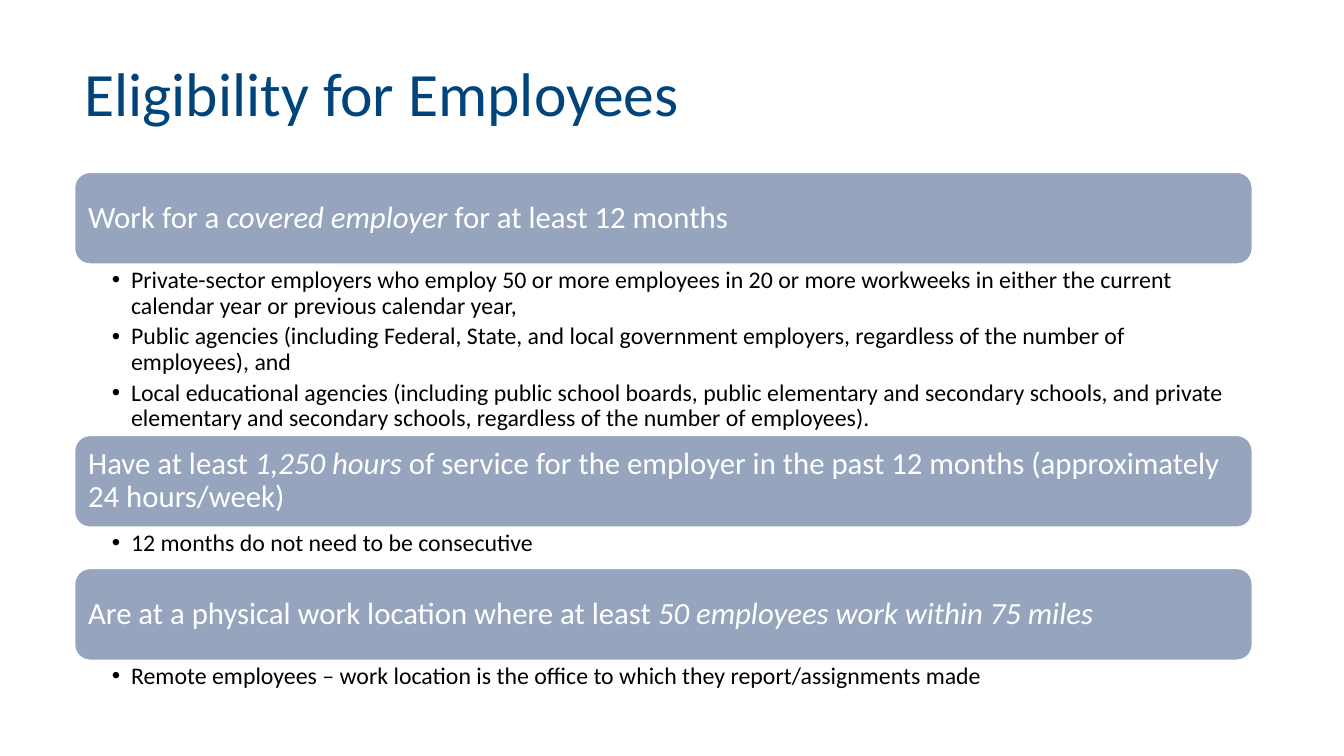
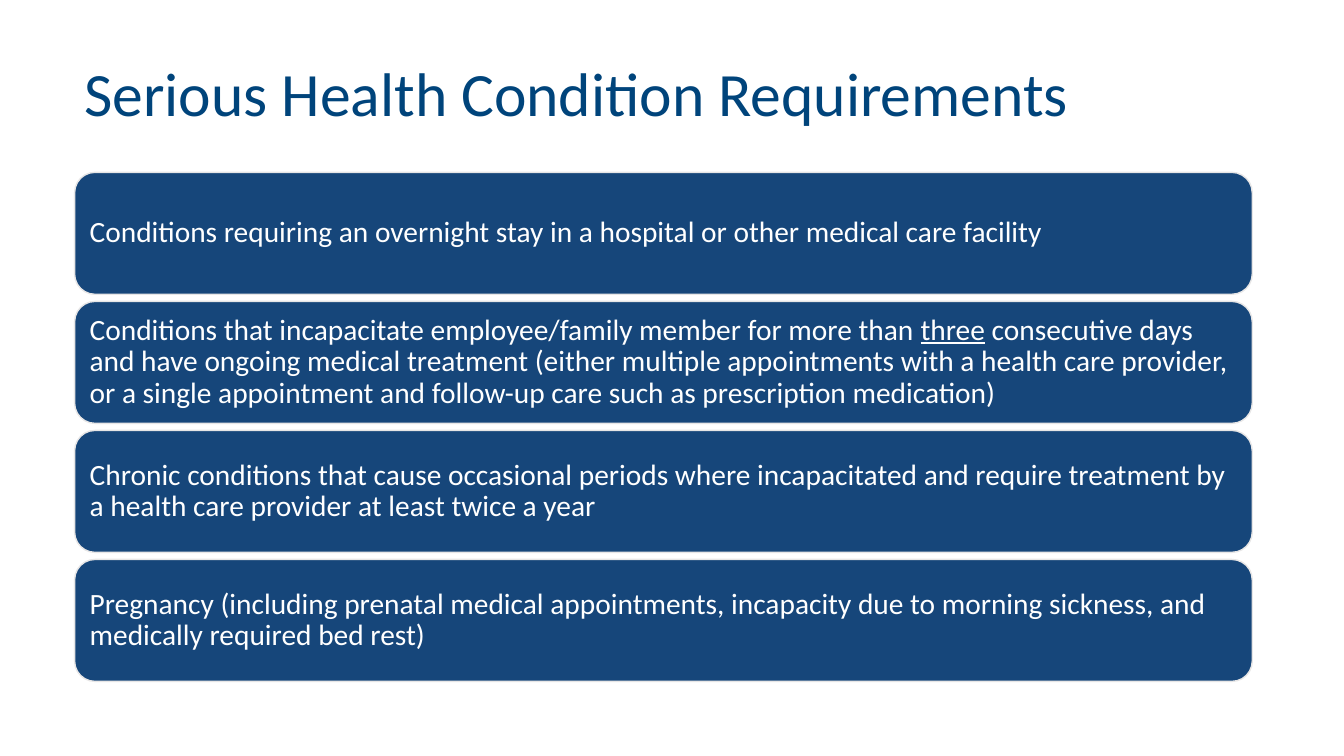
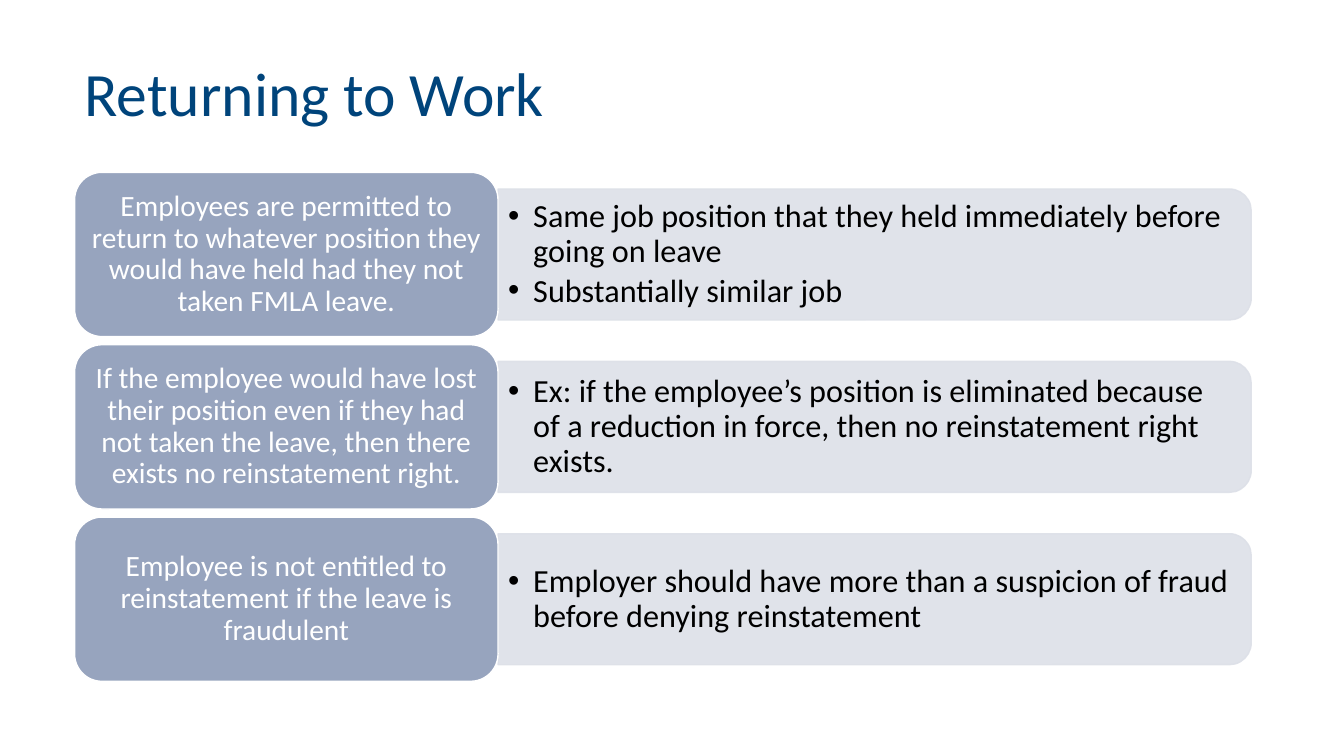
import dataclasses
import typing

import lxml.etree
import pptx
import pptx.dml.color
import pptx.enum.shapes
import pptx.enum.text
import pptx.oxml.ns
import pptx.util

Inches = pptx.util.Inches
Pt = pptx.util.Pt
qn = pptx.oxml.ns.qn
RGB = pptx.dml.color.RGBColor.from_string
SHAPE = pptx.enum.shapes.MSO_SHAPE
ALIGN = pptx.enum.text.PP_ALIGN
ANCHOR = pptx.enum.text.MSO_ANCHOR


# Theme: colours, type sizes and the shared grid
@dataclasses.dataclass(frozen=True)
class Theme:
    font: str = "Calibri"
    title: str = "00447B"
    light: str = "FFFFFF"
    dark: str = "000000"
    band: str = "97A4BE"
    navy: str = "16467A"
    navy_line: str = "E7E6E6"
    panel: str = "DDE0E8"
    panel_opacity: int = 90
    title_size: int = 44
    heading_size: int = 22
    card_size: int = 21
    body_size: int = 17
    panel_size: int = 23
    line_spacing: float = 0.9
    left: float = 0.74
    width: float = 11.68
    top: float = 1.71
    height: float = 5.05


T = Theme()


class Box(typing.NamedTuple):
    left: float
    top: float
    width: float
    height: float

    def emu(self) -> list[int]:
        return [Inches(v) for v in self]


class Run(typing.NamedTuple):
    text: str
    format: dict[str, bool] = {}


class Bullet(typing.NamedTuple):
    indent: float
    gap: float


Para = list[Run]


@dataclasses.dataclass(frozen=True)
class TextStyle:
    size: int
    color: str
    insets: tuple[float, float, float, float] = (0.1, 0.05, 0.1, 0.05)
    anchor: ANCHOR = ANCHOR.MIDDLE
    align: ALIGN = ALIGN.LEFT
    bullet: Bullet | None = None


class Section(typing.NamedTuple):
    heading: Para
    points: list[Para]
    body_height: float


class Row(typing.NamedTuple):
    card: Para
    points: list[Para]


TITLE = TextStyle(T.title_size, T.title)
HEADING = TextStyle(T.heading_size, T.light, (0.09,) * 4)
CONDITION = TextStyle(T.card_size, T.light, (0.09,) * 4)
CARD = TextStyle(T.card_size, T.light, (0.09, 0.04, 0.09, 0.04), align=ALIGN.CENTER)
BODY = TextStyle(T.body_size, T.dark, (0.37, 0.03, 0.17, 0.03), ANCHOR.TOP,
                 bullet=Bullet(0.19, 3.4))
PANEL = TextStyle(T.panel_size, T.dark, bullet=Bullet(0.25, 3.4))


# Drawing helpers
def apply(obj: typing.Any, values: dict[str, typing.Any]) -> None:
    for name, value in values.items():
        setattr(obj, name, value)


def add_bullet(p: typing.Any, indent: float) -> None:
    pPr = p._p.get_or_add_pPr()
    pPr.set("marL", str(Inches(indent)))
    pPr.set("indent", str(-Inches(indent)))
    lxml.etree.SubElement(pPr, qn("a:buFont")).set("typeface", "Arial")
    lxml.etree.SubElement(pPr, qn("a:buChar")).set("char", "•")


def write(sp: typing.Any, paras: list[Para], style: TextStyle) -> None:
    tf = sp.text_frame
    sides = ("margin_left", "margin_top", "margin_right", "margin_bottom")
    apply(tf, {"word_wrap": True, "vertical_anchor": style.anchor,
               **{side: Inches(v) for side, v in zip(sides, style.insets)}})
    for i, para in enumerate(paras):
        p = tf.add_paragraph() if i else tf.paragraphs[0]
        if style.bullet:
            add_bullet(p, style.bullet.indent)
            if i:
                p.space_before = Pt(style.bullet.gap)
        apply(p, {"alignment": style.align, "line_spacing": T.line_spacing})
        for run in para:
            r = p.add_run()
            r.text = run.text
            apply(r.font, {"name": T.font, "size": Pt(style.size), **run.format})
            r.font.color.rgb = RGB(style.color)


def add_text(s: typing.Any, box: Box, paras: list[Para], style: TextStyle) -> None:
    write(s.shapes.add_textbox(*box.emu()), paras, style)


def add_block(s: typing.Any, kind: SHAPE, box: Box, fill: str, line: str) -> typing.Any:
    sp = s.shapes.add_shape(kind, *box.emu())
    sp.shadow.inherit = False
    sp.fill.solid()
    sp.fill.fore_color.rgb = RGB(fill)
    sp.line.color.rgb = RGB(line)
    sp.line.width = Pt(1)
    return sp


def add_card(s: typing.Any, box: Box, para: Para, style: TextStyle,
             fill: str = T.band, line: str = T.light) -> None:
    write(add_block(s, SHAPE.ROUNDED_RECTANGLE, box, fill, line), [para], style)


def add_panel(s: typing.Any, box: Box) -> None:
    """Panel with its two right corners rounded: a tall shape turned by 90°."""
    shift = (box.width - box.height) / 2
    upright = Box(box.left + shift, box.top - shift, box.height, box.width)
    sp = add_block(s, SHAPE.ROUND_2_SAME_RECTANGLE, upright, T.panel, T.panel)
    sp.rotation = 90
    for color in sp._element.spPr.iter(qn("a:srgbClr")):
        lxml.etree.SubElement(color, qn("a:alpha")).set("val", str(T.panel_opacity * 1000))


def split_rows(count: int, gap: float, width: float) -> list[Box]:
    height = (T.height - gap * (count - 1)) / count
    return [Box(T.left, T.top + i * (height + gap), width, height) for i in range(count)]


def new_slide(prs: typing.Any, title: str) -> typing.Any:
    s = prs.slides.add_slide(prs.slide_layouts[6])
    add_text(s, Box(T.left, 0.4, T.width, 1.11), [[Run(title)]], TITLE)
    return s


# Content
ITALIC = {"italic": True}
UNDERLINE = {"underline": True}

SECTIONS = [
    Section(
        [Run("Work for a "), Run("covered employer ", ITALIC), Run("for at least 12 months")],
        [[Run("Private-sector employers who employ 50 or more employees in 20 or more "
              "workweeks in either the current calendar year or previous calendar year,")],
         [Run("Public agencies (including Federal, State, and local government employers, "
              "regardless of the number of employees), and")],
         [Run("Local educational agencies (including public school boards, public "
              "elementary and secondary schools, and private elementary and secondary "
              "schools, regardless of the number of employees).")]],
        1.69),
    Section(
        [Run("Have at least "), Run("1,250 hours ", ITALIC),
         Run("of service for the employer in the past 12 months "
             "(approximately 24 hours/week)")],
        [[Run("12 months do not need to be consecutive")]],
        0.4),
    Section(
        [Run("Are at a physical work location where at least "),
         Run("50 employees work within 75 miles", ITALIC)],
        [[Run("Remote employees – work location is the office to which they "
              "report/assignments made")]],
        0.4),
]

CONDITIONS = [
    [Run("Conditions requiring an overnight stay in a hospital or other medical care "
         "facility")],
    [Run("Conditions that incapacitate employee/family member for more than "),
     Run("three", UNDERLINE),
     Run(" consecutive days and have ongoing medical treatment (either multiple "
         "appointments with a health care provider, or a single appointment and "
         "follow-up care such as prescription medication)")],
    [Run("Chronic conditions that cause occasional periods where incapacitated and "
         "require treatment by a health care provider at least twice a year")],
    [Run("Pregnancy (including prenatal medical appointments, incapacity due to morning "
         "sickness, and medically required bed rest)")],
]

ROWS = [
    Row([Run("Employees are permitted to return to whatever position they would have "
             "held had they not taken FMLA leave.")],
        [[Run("Same job position that they held immediately before going on leave")],
         [Run("Substantially similar job")]]),
    Row([Run("If the employee would have lost their position even if they had not taken "
             "the leave, then there exists no reinstatement right.")],
        [[Run("Ex: if the employee’s position is eliminated because of a reduction in "
              "force, then no reinstatement right exists.")]]),
    Row([Run("Employee is not entitled to reinstatement if the leave is fraudulent")],
        [[Run("Employer should have more than a suspicion of fraud before denying "
              "reinstatement")]]),
]


# Slides
def eligibility_slide(prs: typing.Any) -> None:
    s = new_slide(prs, "Eligibility for Employees")
    band_height, gap, top = 0.91, 0.01, T.top
    for section in SECTIONS:
        add_card(s, Box(T.left, top, T.width, band_height), section.heading, HEADING)
        top += band_height + gap
        add_text(s, Box(T.left, top, T.width, section.body_height), section.points, BODY)
        top += section.body_height


def conditions_slide(prs: typing.Any) -> None:
    s = new_slide(prs, "Serious Health Condition Requirements")
    for box, para in zip(split_rows(len(CONDITIONS), 0.07, T.width), CONDITIONS):
        add_card(s, box, para, CONDITION, T.navy, T.navy_line)


def returning_slide(prs: typing.Any) -> None:
    s = new_slide(prs, "Returning to Work")
    card_width, panel_height, text_height = 4.2, 1.3, 1.17
    panel_left = T.left + card_width
    for box, row in zip(split_rows(len(ROWS), 0.08, card_width), ROWS):
        middle = box.top + box.height / 2
        add_panel(s, Box(panel_left, middle - panel_height / 2, 7.47, panel_height))
        add_text(s, Box(panel_left, middle - text_height / 2, 7.41, text_height),
                 row.points, PANEL)
        add_card(s, box, row.card, CARD)


def main() -> None:
    prs = pptx.Presentation()
    apply(prs, {"slide_width": Inches(13.33), "slide_height": Inches(7.5)})
    for build in (eligibility_slide, conditions_slide, returning_slide):
        build(prs)
    prs.save("out.pptx")


if __name__ == "__main__":
    main()
